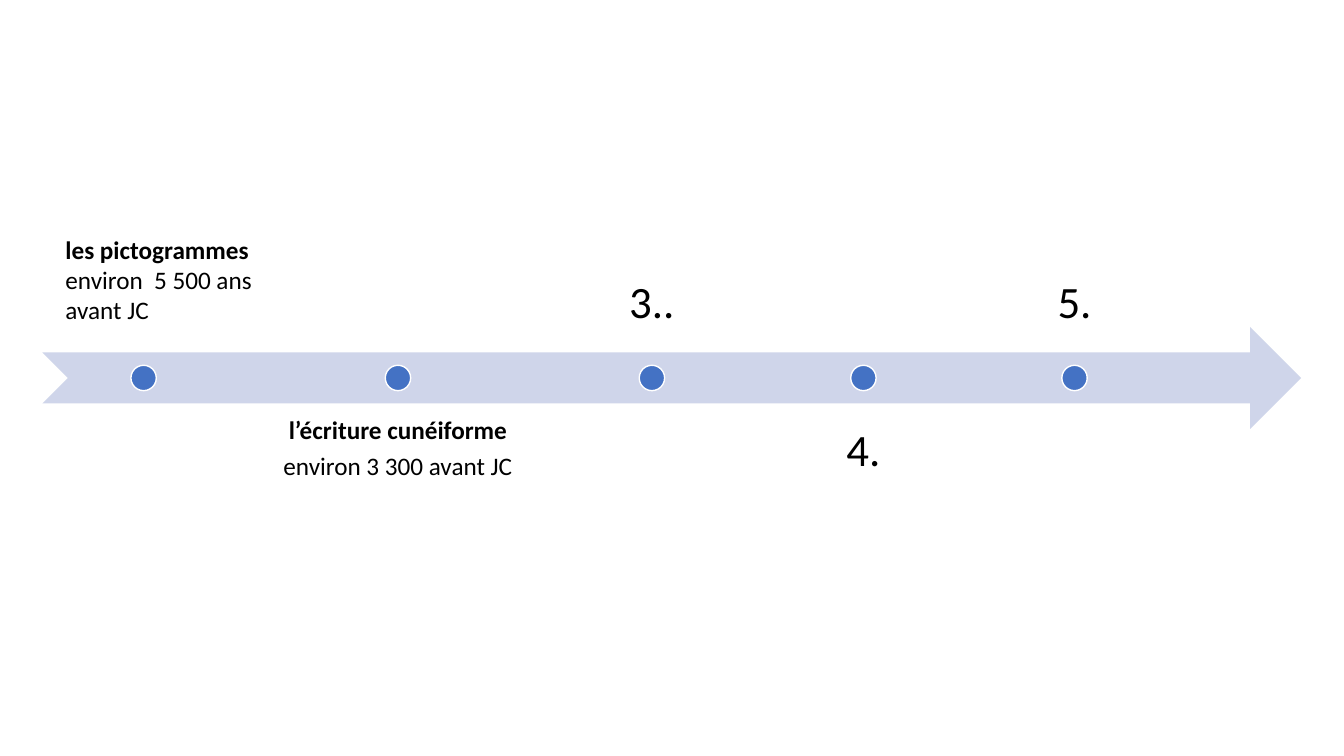
from pptx import Presentation
from pptx.dml.color import RGBColor
from pptx.enum.shapes import MSO_SHAPE
from pptx.enum.text import MSO_ANCHOR, PP_ALIGN
from pptx.util import Cm, Pt

# Centre of dot, width of label, inset, size, label above the arrow
STAGES = [
    (10.03, 7.24, 0.36, 18, False, ["l’écriture cunéiforme", "environ 3 300 avant JC"]),
    (16.43, 5.08, 0.64, 32, True, ["3.."]),
    (21.76, 5.08, 0.64, 32, False, ["4."]),
    (27.08, 5.08, 0.64, 32, True, ["5."]),
]
FIRST_DOT = 3.62
DOT = 0.64


def color(hex_code):
    return RGBColor.from_string(hex_code)


def add_filled(s, kind, x, y, w, h, fill, line=None):
    shape = s.shapes.add_shape(kind, Cm(x), Cm(y), Cm(w), Cm(h))
    shape.shadow.inherit = False
    shape.fill.solid()
    shape.fill.fore_color.rgb = color(fill)
    if line:
        shape.line.color.rgb = color(line)
        shape.line.width = Pt(1)
    else:
        shape.line.fill.background()


def add_text(s, lines, x, y, w, h, size=18, align=PP_ALIGN.LEFT, anchor=MSO_ANCHOR.TOP,
             inset=None, spacing=1.0, after=0):
    """Add a text box; the first of several lines is a bold heading."""
    tf = s.shapes.add_textbox(Cm(x), Cm(y), Cm(w), Cm(h)).text_frame
    tf.word_wrap = True
    tf.vertical_anchor = anchor
    if inset is not None:
        tf.margin_left = tf.margin_right = tf.margin_top = tf.margin_bottom = Cm(inset)
    for i, line in enumerate(lines):
        p = tf.paragraphs[0] if i == 0 else tf.add_paragraph()
        p.alignment = align
        p.line_spacing = spacing
        p.space_after = Pt(after)
        r = p.add_run()
        r.text = line
        r.font.name = "Calibri"
        r.font.size = Pt(size)
        r.font.bold = i == 0 and len(lines) > 1
        r.font.color.rgb = color("000000")


def add_timeline(s, x, y, w, h):
    """Draw the arrow in the given box, with its dots and labels around it."""
    add_filled(s, MSO_SHAPE.NOTCHED_RIGHT_ARROW, x, y, w, h, "CFD5EA")
    middle = y + h / 2
    for center in [FIRST_DOT] + [stage[0] for stage in STAGES]:
        add_filled(s, MSO_SHAPE.OVAL, center - DOT / 2, middle - DOT / 2, DOT, DOT,
                   "4472C4", line="FFFFFF")
    for center, width, inset, size, above, lines in STAGES:
        top = middle - h * 1.25 if above else middle + h / 4
        add_text(s, lines, center - width / 2, top, width, h, size=size,
                 align=PP_ALIGN.CENTER, inset=inset, spacing=0.9, after=size * 0.35,
                 anchor=MSO_ANCHOR.BOTTOM if above else MSO_ANCHOR.TOP)
    add_text(s, ["les pictogrammes", "environ  5 500 ans", "avant JC"],
             x + 0.33, y - 2.47, 6.05, h)


def main():
    prs = Presentation()
    prs.slide_width, prs.slide_height = Cm(33.87), Cm(19.05)
    s = prs.slides.add_slide(prs.slide_layouts[6])
    add_timeline(s, 1.07, 8.24, 31.72, 2.57)
    prs.save("out.pptx")


if __name__ == "__main__":
    main()
